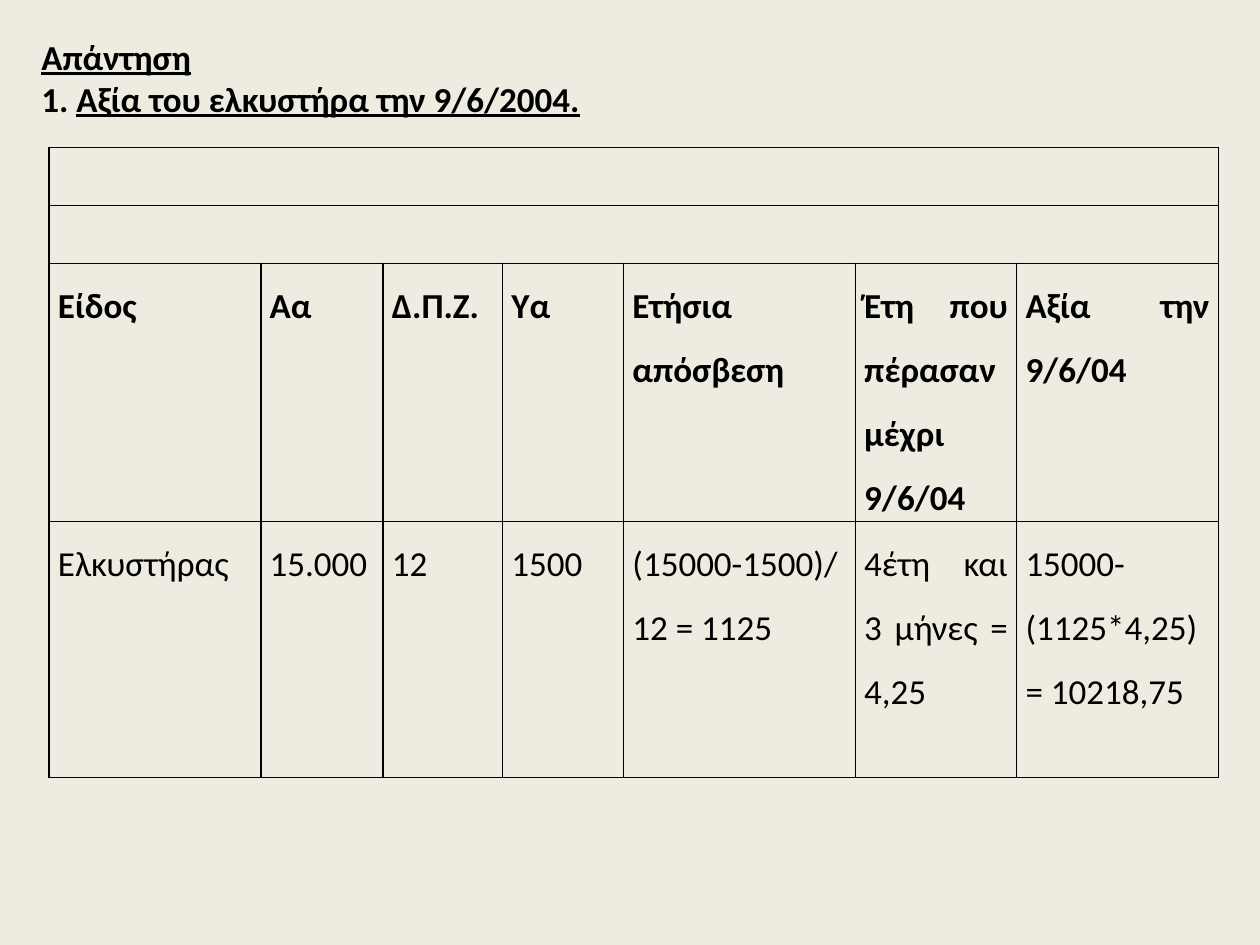
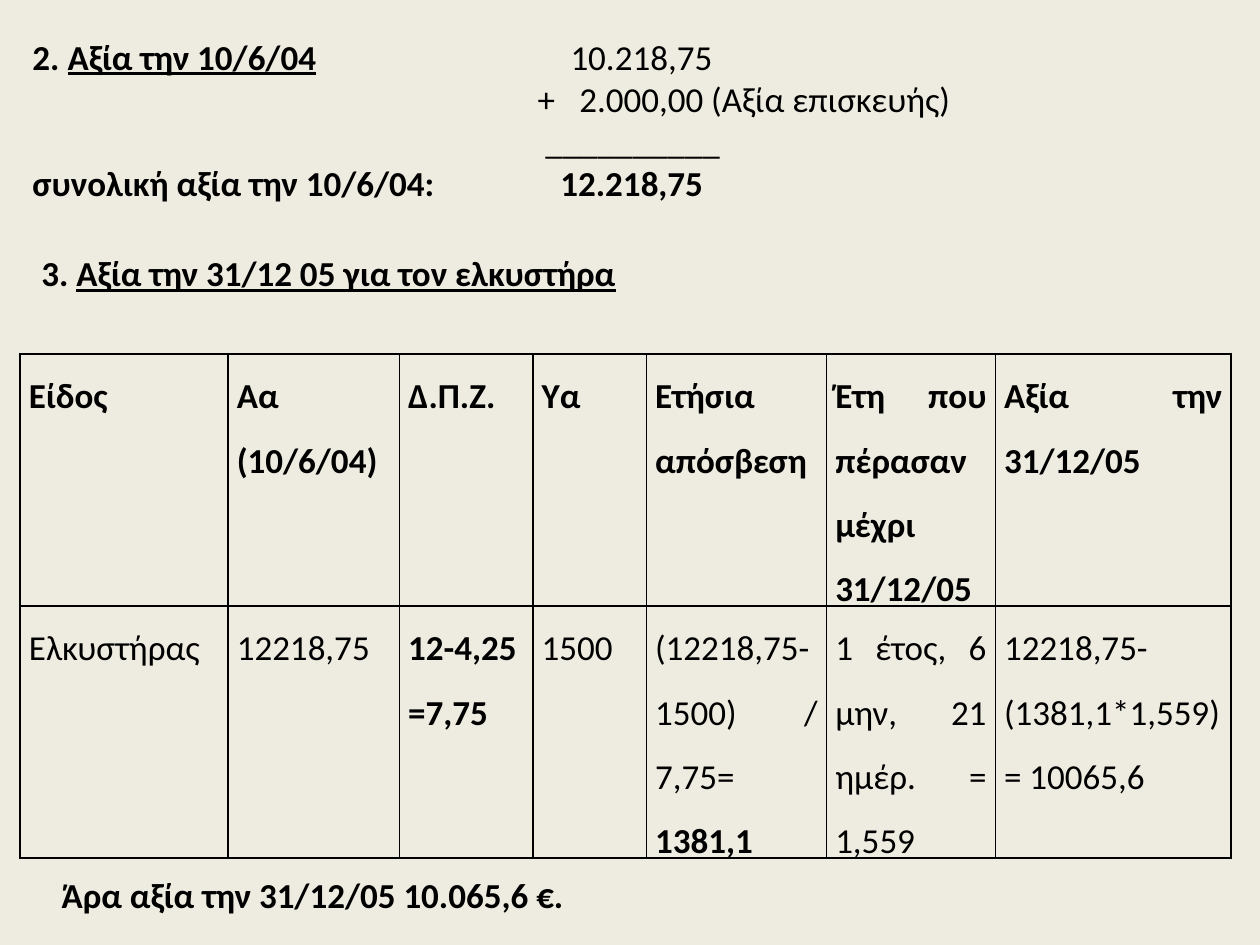
from lxml import etree
from pptx import Presentation, util as u
from pptx.dml.color import RGBColor
from pptx.enum import text
from pptx.oxml.ns import qn

INK, PAPER = "000000", "EEECE1"


def color(fmt, hex_value):
    fmt.rgb = RGBColor.from_string(hex_value)


def write(tf, paragraphs, align, spacing=None):
    for i, runs in enumerate(paragraphs):
        p = tf.paragraphs[0] if i == 0 else tf.add_paragraph()
        p.alignment = align
        if spacing:
            p.line_spacing = spacing
        for content, style in runs:
            r = p.add_run()
            r.text = content
            r.font.name, r.font.size = "Calibri", u.Pt(20)
            r.font.bold = "b" in style
            r.font.underline = "u" in style
            color(r.font.color, INK)


JUSTIFY, LEFT = text.PP_ALIGN.JUSTIFY, text.PP_ALIGN.LEFT

prs = Presentation()
prs.slide_width, prs.slide_height = u.Inches(10), u.Inches(7.5)

slides = [
    {
        "texts": [
            ((0.23, 0.23, 9.53, 1.08), LEFT, True, [], [
                [("Απάντηση", "bu")],
                [("1. ", "b"), ("Αξία του ελκυστήρα την 9/6/2004.", "bu")],
            ]),
        ],
        "at": (0.39, 1.17),
        "cols": [1.68, 0.97, 0.95, 0.96, 1.84, 1.28, 1.6],
        "rows": [0.46, 0.46, 2.05, 2.03],
        "cells": [
            [], [],
            ["Είδος", "Αα", "Δ.Π.Ζ.", "Υα", "Ετήσια απόσβεση",
             "Έτη που πέρασαν μέχρι 9/6/04", "Αξία την 9/6/04"],
            ["Ελκυστήρας", "15.000", "12", "1500", "(15000-1500)/ 12 = 1125",
             "4έτη και 3 μήνες = 4,25", "15000-(1125*4,25)= 10218,75"],
        ],
    },
    {
        "texts": [
            ((0.16, 0.23, 9.53, 1.45), JUSTIFY, True,
             [[4.27], [4.01, 4.34], [4.07], [4.19]], [
                [("2. ", "b"), ("Αξία την 10/6/04", "bu"), ("\t10.218,75", "")],
                [("\t+\t2.000,00 (Αξία επισκευής)", "")],
                [("\t__________", "")],
                [("συνολική αξία την 10/6/04:\t12.218,75", "b")],
            ]),
            ((0.23, 1.95, 9.45, 0.64), JUSTIFY, True, [], [
                [("3. ", "b"), ("Αξία την 31/12 05 για τον ελκυστήρα", "bu")],
            ]),
            ((0.39, 6.88, 4.22, 0.44), JUSTIFY, False, [], [
                [("Άρα αξία την 31/12/05 10.065,6 €.", "b")],
            ]),
        ],
        "at": (0.16, 2.81),
        "cols": [1.65, 1.36, 1.06, 0.9, 1.43, 1.34, 1.87],
        "rows": [2, 2],
        "cells": [
            ["Είδος", [[("Αα", "b")], [("(10/6/04)", "b")]], "Δ.Π.Ζ.", "Υα",
             "Ετήσια απόσβεση", "Έτη που πέρασαν μέχρι 31/12/05",
             "Αξία την 31/12/05"],
            ["Ελκυστήρας", "12218,75", [[("12-4,25 =7,75", "b")]], "1500",
             [[("(12218,75-1500) / 7,75= ", ""), ("1381,1", "b")]],
             "1 έτος, 6 μην, 21 ημέρ. = 1,559",
             "12218,75-(1381,1*1,559) = 10065,6"],
        ],
    },
]

for data in slides:
    s = prs.slides.add_slide(prs.slide_layouts[6])
    s.background.fill.solid()
    color(s.background.fill.fore_color, PAPER)

    for box, align, wrap, tabs, paragraphs in data["texts"]:
        tf = s.shapes.add_textbox(*map(u.Inches, box)).text_frame
        tf.word_wrap = wrap
        write(tf, paragraphs, align)
        for p, stops in zip(tf.paragraphs, tabs):
            tab_list = etree.SubElement(p._p.get_or_add_pPr(), qn("a:tabLst"))
            for stop in stops:
                etree.SubElement(tab_list, qn("a:tab"),
                                 pos=str(u.Inches(stop)), algn="l")

    cols, rows, cells = data["cols"], data["rows"], data["cells"]
    size = sum(cols), sum(rows)
    table = s.shapes.add_table(len(rows), len(cols),
                               *map(u.Inches, data["at"] + size)).table
    table.first_row = table.horz_banding = False
    for col, width in zip(table.columns, cols):
        col.width = u.Inches(width)
    for row, height in zip(table.rows, rows):
        row.height = u.Inches(height)

    for i, line in enumerate(cells):
        if not line:
            table.cell(i, 0).merge(table.cell(i, len(cols) - 1))
        for j in range(len(cols)):
            cell = table.cell(i, j)
            cell.margin_left = cell.margin_right = u.Inches(0.07)
            cell.margin_top = cell.margin_bottom = 0
            tcPr = cell._tc.get_or_add_tcPr()
            for side in "LRTB":
                ln = etree.SubElement(tcPr, qn("a:ln" + side), w=str(u.Pt(1)))
                fill = etree.SubElement(ln, qn("a:solidFill"))
                etree.SubElement(fill, qn("a:srgbClr"), val=INK)
            cell.fill.background()
            if line:
                content = line[j]
                if isinstance(content, str):
                    style = "b" if i == len(rows) - 2 else ""
                    content = [[(content, style)]]
                write(cell.text_frame, content, JUSTIFY, 1.5)

prs.save("out.pptx")
